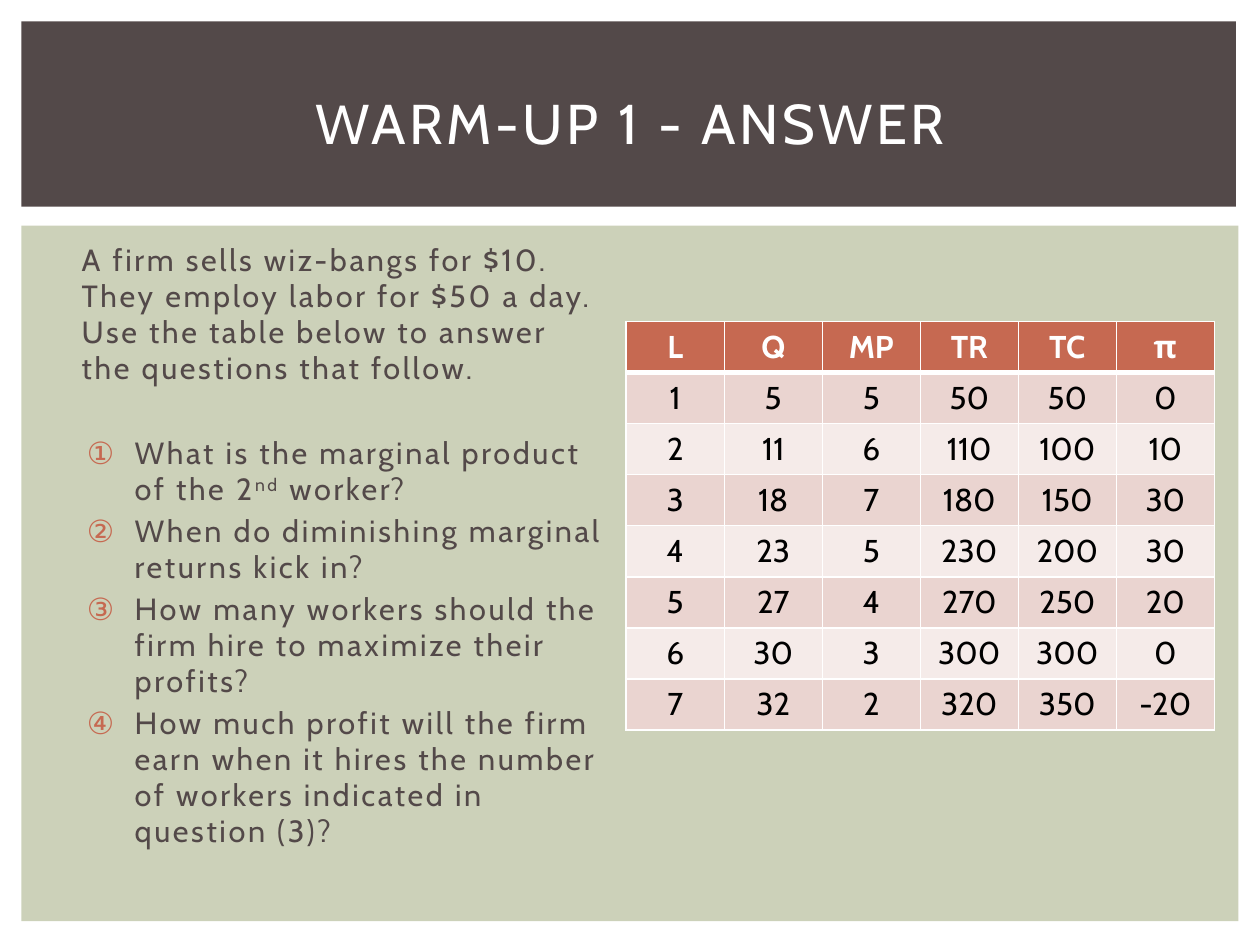
from lxml.etree import SubElement
from pptx import Presentation
from pptx.dml.color import RGBColor
from pptx.enum.shapes import MSO_SHAPE
from pptx.enum.text import MSO_ANCHOR, MSO_AUTO_SIZE, PP_ALIGN
from pptx.oxml.ns import qn
from pptx.util import Inches, Pt

FONT = "Cabin"
BROWN = RGBColor(0x53, 0x49, 0x49)
SAGE = RGBColor(0xCC, 0xD1, 0xB9)
RUST = RGBColor(0xC6, 0x69, 0x51)
PINK = RGBColor(0xEA, 0xD4, 0xD0)
PALE_PINK = RGBColor(0xF5, 0xEB, 0xE9)
WHITE = RGBColor(0xFF, 0xFF, 0xFF)
BLACK = RGBColor(0, 0, 0)

TITLE = "WARM-UP 1 - ANSWER"
INTRO = ("A firm sells wiz-bangs for $10. They employ labor for $50 a day. "
         "Use the table below to answer the questions that follow.")
# Each question is a list of runs; "nd" is raised
QUESTIONS = [
    ["What is the marginal product of the 2", "nd", " worker?"],
    ["When do diminishing marginal returns kick in?"],
    ["How many workers should the firm hire to maximize their profits?"],
    ["How much profit will the firm earn when it hires the number of workers "
     "indicated in question (3)?"],
]
TABLE_ROWS = [
    ["L", "Q", "MP", "TR", "TC", "π"],
    [1, 5, 5, 50, 50, 0],
    [2, 11, 6, 110, 100, 10],
    [3, 18, 7, 180, 150, 30],
    [4, 23, 5, 230, 200, 30],
    [5, 27, 4, 270, 250, 20],
    [6, 30, 3, 300, 300, 0],
    [7, 32, 2, 320, 350, -20],
]


def add_run(paragraph, text, size, color, bold=False, tracking=0):
    run = paragraph.add_run()
    run.text = text
    run.font.name = FONT
    run.font.size = Pt(size)
    run.font.bold = bold
    run.font.color.rgb = color
    if tracking:
        run.font._element.set("spc", str(int(tracking * 100)))
    return run


def add_band(slide, top, width, height, color):
    band = slide.shapes.add_shape(MSO_SHAPE.RECTANGLE, Inches(0.17), Inches(top),
                                  Inches(width), Inches(height))
    band.shadow.inherit = False
    band.fill.solid()
    band.fill.fore_color.rgb = color
    band.line.fill.background()


def set_title(slide):
    title = slide.shapes.title
    title.left, title.top = Inches(0.42), Inches(0.39)
    title.width, title.height = Inches(9.17), Inches(1.15)
    frame = title.text_frame
    frame.vertical_anchor = MSO_ANCHOR.MIDDLE
    frame.auto_size = MSO_AUTO_SIZE.NONE
    paragraph = frame.paragraphs[0]
    paragraph.alignment = PP_ALIGN.CENTER
    add_run(paragraph, TITLE, 32, WHITE, tracking=2)
    # Bring the title in front of the bands
    slide.shapes._spTree.append(title._element)


def format_paragraph(paragraph, margin, indent, space_before):
    paragraph.line_spacing = 0.98
    paragraph.space_before = Pt(space_before)
    properties = paragraph._p.get_or_add_pPr()
    properties.set("marL", str(Inches(margin)))
    properties.set("indent", str(Inches(indent)))
    return properties


def add_circled_number(properties):
    color = SubElement(properties, qn("a:buClr"))
    SubElement(color, qn("a:srgbClr")).set("val", str(RUST))
    number = SubElement(properties, qn("a:buAutoNum"))
    number.set("type", "circleNumWdBlackPlain")


def add_questions(slide):
    box = slide.shapes.add_textbox(Inches(0.5), Inches(1.88), Inches(4.42), Inches(4.82))
    frame = box.text_frame
    frame.word_wrap = True
    intro = frame.paragraphs[0]
    format_paragraph(intro, 0.05, 0, 3.5)
    add_run(intro, INTRO, 17.5, BROWN, tracking=1.5)
    for index, parts in enumerate(QUESTIONS):
        paragraph = frame.add_paragraph()
        # The first question stands one line below the introduction
        space_before = 28 if index == 0 else 3.5
        add_circled_number(format_paragraph(paragraph, 0.47, -0.38, space_before))
        for part in parts:
            run = add_run(paragraph, part, 17.5, BROWN, tracking=1.5)
            if part == "nd":
                run.font._element.set("baseline", "30000")


def add_border(cell, side, width):
    line = SubElement(cell._tc.get_or_add_tcPr(), qn(f"a:ln{side}"))
    line.set("w", str(Pt(width)))
    fill = SubElement(line, qn("a:solidFill"))
    SubElement(fill, qn("a:srgbClr")).set("val", str(WHITE))


def format_cell(cell, value, row):
    is_header = row == 0
    thick_side = {0: "B", 1: "T"}.get(row)
    for side in "LRTB":
        add_border(cell, side, 3 if side == thick_side else 1)
    cell.fill.solid()
    cell.fill.fore_color.rgb = RUST if is_header else PINK if row % 2 else PALE_PINK
    cell.vertical_anchor = MSO_ANCHOR.MIDDLE
    paragraph = cell.text_frame.paragraphs[0]
    paragraph.alignment = PP_ALIGN.CENTER
    add_run(paragraph, str(value), 18, WHITE if is_header else BLACK, bold=is_header)


def add_output_table(slide):
    table = slide.shapes.add_table(len(TABLE_ROWS), len(TABLE_ROWS[0]), Inches(4.97),
                                   Inches(2.55), Inches(4.67), Inches(3.24)).table
    for row, values in enumerate(TABLE_ROWS):
        for column, value in enumerate(values):
            format_cell(table.cell(row, column), value, row)


def main():
    presentation = Presentation()
    presentation.slide_width = Inches(10)
    presentation.slide_height = Inches(7.5)
    slide = presentation.slides.add_slide(presentation.slide_layouts[5])

    # Background bands
    add_band(slide, 1.79, 9.66, 5.52, SAGE)
    add_band(slide, 0.17, 9.64, 1.47, BROWN)

    # Content
    add_questions(slide)
    set_title(slide)
    add_output_table(slide)

    presentation.save("out.pptx")


if __name__ == "__main__":
    main()
